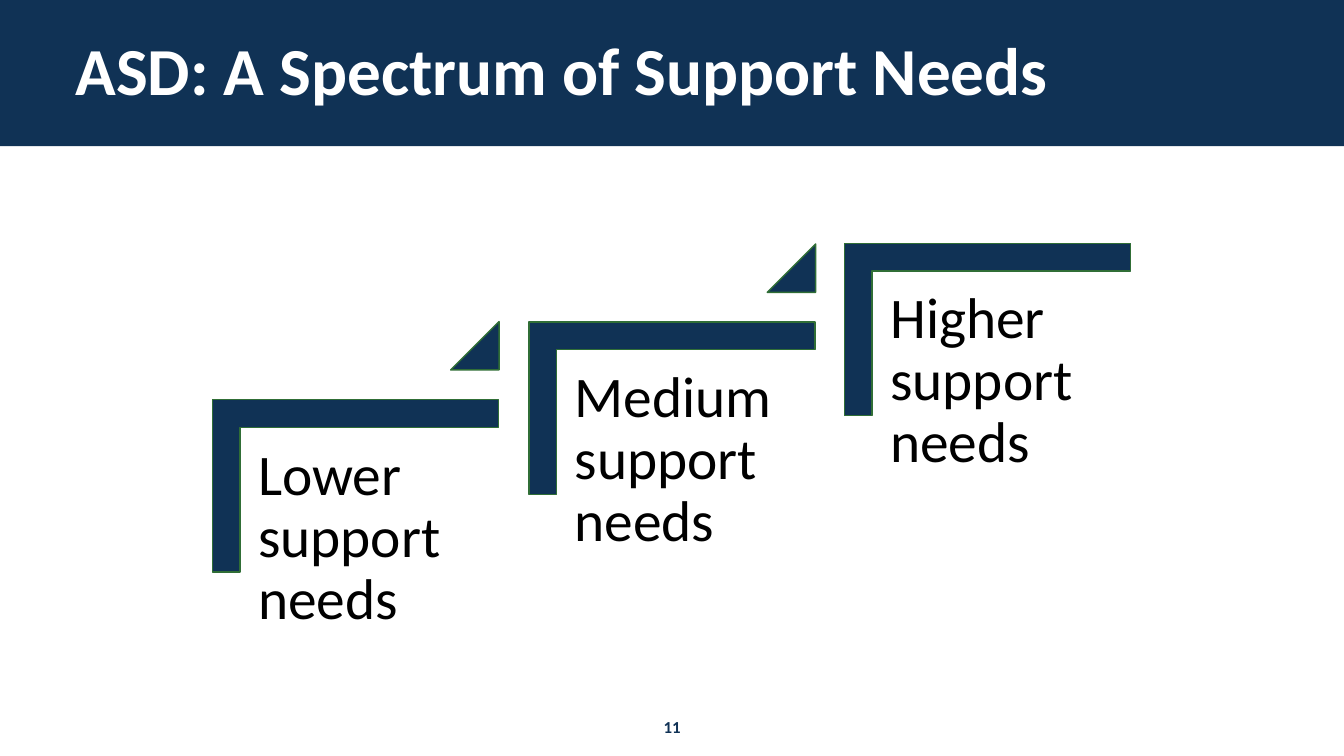
from dataclasses import dataclass

from pptx import Presentation
from pptx.dml.color import RGBColor
from pptx.enum.shapes import MSO_SHAPE
from pptx.enum.text import MSO_ANCHOR, PP_ALIGN
from pptx.util import Emu, Pt

RECT = MSO_SHAPE.RECTANGLE
CORNER = MSO_SHAPE.CORNER
TRIANGLE = MSO_SHAPE.ISOSCELES_TRIANGLE
TOP, MIDDLE = MSO_ANCHOR.TOP, MSO_ANCHOR.MIDDLE
LEFT, CENTER = PP_ALIGN.LEFT, PP_ALIGN.CENTER

EMU_PER_PX = 9144  # 100 px to the inch
FONT = "Calibri"
NAVY, GREEN, WHITE, BLACK = "103255", "306E36", "FFFFFF", "000000"


@dataclass
class Level:
    label: str
    left: int
    top: int


LEVELS = [
    Level("Lower support needs", 239, 425),
    Level("Medium support needs", 553, 348),
    Level("Higher support needs", 866, 270),
]


def px(n: int) -> Emu:
    return Emu(n * EMU_PER_PX)


def rgb(value: str) -> RGBColor:
    return RGBColor.from_string(value)


def add_shape(slide, kind, x: int, y: int, w: int, h: int, line: str = ""):
    s = slide.shapes.add_shape(kind, px(x), px(y), px(w), px(h))
    s.shadow.inherit = False
    s.fill.solid()
    s.fill.fore_color.rgb = rgb(NAVY)
    if line:
        s.line.color.rgb = rgb(line)
        s.line.width = Pt(1)
    else:
        s.line.fill.background()
    return s


def add_text(slide, text: str, x: int, y: int, w: int, h: int, size: int,
             color: str, bold: bool = False, align=LEFT, anchor=TOP,
             spacing: float = 0.9):
    tf = slide.shapes.add_textbox(px(x), px(y), px(w), px(h)).text_frame
    tf.word_wrap = True
    tf.vertical_anchor = anchor
    p = tf.paragraphs[0]
    p.text = text
    p.alignment = align
    p.line_spacing = spacing
    p.font.name = FONT
    p.font.size = Pt(size)
    p.font.bold = bold
    p.font.color.rgb = rgb(color)
    return tf


def add_level(slide, level: Level, has_next: bool) -> None:
    x, y = level.left, level.top
    # Step bracket
    s = add_shape(slide, CORNER, x + 28, y - 85, 171, 284, GREEN)
    s.rotation = 90
    s.adjustments[0] = s.adjustments[1] = 0.161
    # Label
    tf = add_text(slide, level.label, x, y, 256, 225, 41, BLACK)
    tf.margin_left = tf.margin_right = px(17)
    tf.margin_top = tf.margin_bottom = px(17)
    # Pointer to the next step
    if has_next:
        s = add_shape(slide, TRIANGLE, x + 208, y - 106, 48, 48, GREEN)
        s.adjustments[0] = 1


def main() -> None:
    prs = Presentation()
    prs.slide_width, prs.slide_height = px(1333), px(750)
    slide = prs.slides.add_slide(prs.slide_layouts[6])

    # Title band and page number
    add_shape(slide, RECT, 0, 0, 1333, 145)
    add_text(slide, "11", 609, 706, 115, 30, 12, NAVY, True, CENTER, spacing=1.0)
    add_text(slide, "ASD: A Spectrum of Support Needs", 65, 40, 1204, 67,
             48, WHITE, True, anchor=MIDDLE)

    # Rising steps
    for level in LEVELS:
        add_level(slide, level, has_next=level is not LEVELS[-1])

    prs.save("out.pptx")


if __name__ == "__main__":
    main()
